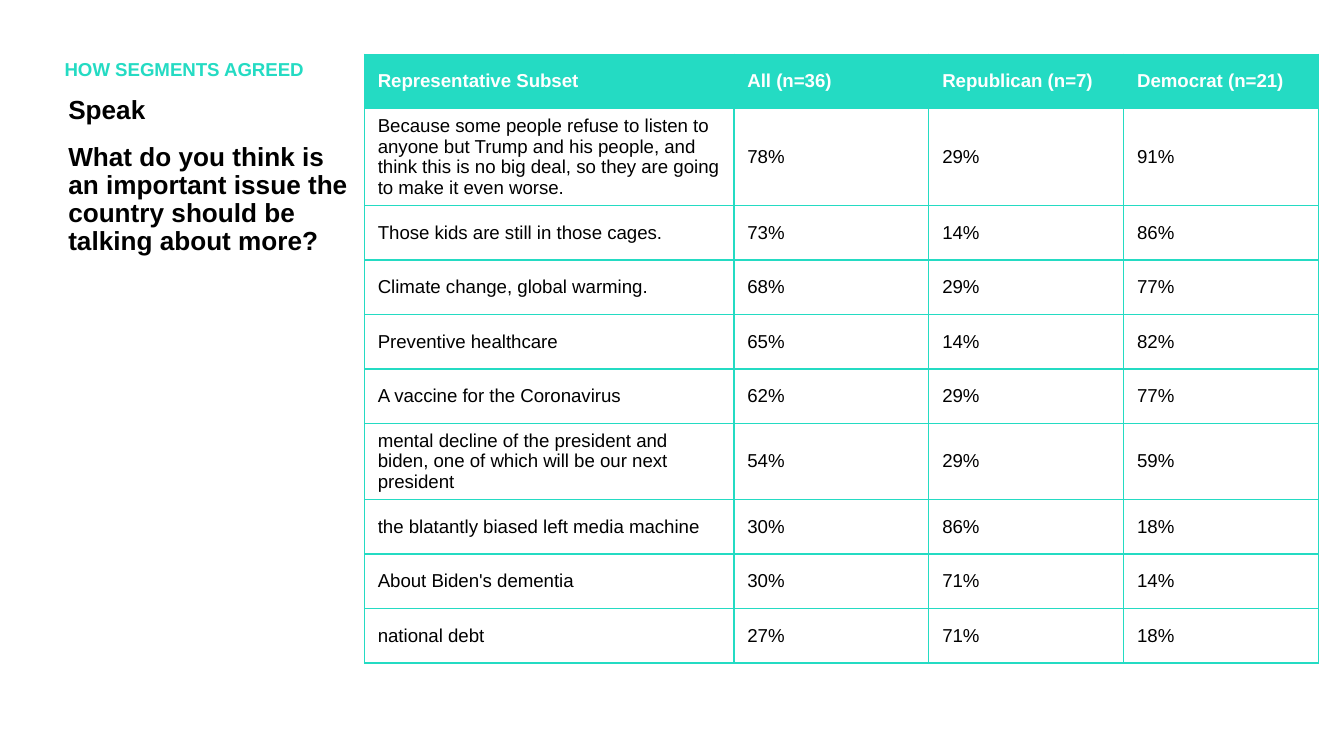
import dataclasses

import pptx
import pptx.dml.color
import pptx.enum.text
import pptx.oxml
import pptx.oxml.ns
import pptx.util

Pt = pptx.util.Pt
RGBColor = pptx.dml.color.RGBColor
ANCHOR = pptx.enum.text.MSO_ANCHOR

TEAL = RGBColor(0x24, 0xDB, 0xC3)
BLACK = RGBColor(0, 0, 0)
WHITE = RGBColor(0xFF, 0xFF, 0xFF)

BODY_FONT = {"name": "Arial", "size": Pt(10), "bold": False}
BOLD_FONT = BODY_FONT | {"bold": True}
QUESTION_FONT = BOLD_FONT | {"size": Pt(14)}
HEADING_SPACING = {"line_spacing": 0.9, "space_before": Pt(10),
                   "alignment": pptx.enum.text.PP_ALIGN.LEFT}
FRAME = {"word_wrap": True, "vertical_anchor": ANCHOR.TOP,
         "auto_size": pptx.enum.text.MSO_AUTO_SIZE.NONE}


@dataclasses.dataclass
class Answer:
    text: str
    everyone: int
    republican: int
    democrat: int

    def cells(self) -> list[str]:
        shares = (self.everyone, self.republican, self.democrat)
        return [self.text] + [f"{share}%" for share in shares]


HEADER = ["Representative Subset", "All (n=36)", "Republican (n=7)", "Democrat (n=21)"]
ANSWERS = [
    Answer("Because some people refuse to listen to anyone but Trump and his people, "
           "and think this is no big deal, so they are going to make it even worse.",
           78, 29, 91),
    Answer("Those kids are still in those cages.", 73, 14, 86),
    Answer("Climate change, global warming.", 68, 29, 77),
    Answer("Preventive healthcare", 65, 14, 82),
    Answer("A vaccine for the Coronavirus", 62, 29, 77),
    Answer("mental decline of the president and biden, one of which will be our "
           "next president", 54, 29, 59),
    Answer("the blatantly biased left media machine", 30, 86, 18),
    Answer("About Biden's dementia", 30, 71, 14),
    Answer("national debt", 27, 71, 18),
]
COLUMN_WIDTHS = [Pt(198)] + [Pt(104.4)] * 3
ROW_HEIGHT = Pt(29.2)


def set_all(target: object, values: dict) -> None:
    for key, value in values.items():
        setattr(target, key, value)


def add_run(p, text: str, font: dict, color: RGBColor) -> None:
    r = p.add_run()
    r.text = text
    set_all(r.font, font)
    r.font.color.rgb = color


def write_heading(sp, box: tuple, texts: list[str], font: dict, color: RGBColor) -> None:
    set_all(sp, dict(zip(("left", "top", "width", "height"), map(Pt, box))))
    tf = sp.text_frame
    set_all(tf, FRAME)
    for i, text in enumerate(texts):
        p = tf.add_paragraph() if i else tf.paragraphs[0]
        set_all(p, HEADING_SPACING)
        add_run(p, text, font, color)


def add_borders(cell, color: RGBColor, width: int) -> None:
    tc_pr = cell._tc.get_or_add_tcPr()
    for i, side in enumerate(("lnL", "lnR", "lnT", "lnB")):
        tc_pr.insert(i, pptx.oxml.parse_xml(
            f'<a:{side} {pptx.oxml.ns.nsdecls("a")} w="{width}"><a:solidFill>'
            f'<a:srgbClr val="{color}"/></a:solidFill></a:{side}>'))


def fill_cell(cell, text: str, is_header: bool) -> None:
    cell.vertical_anchor = ANCHOR.MIDDLE
    cell.fill.solid()
    cell.fill.fore_color.rgb = TEAL if is_header else WHITE
    add_run(cell.text_frame.paragraphs[0], text,
            BOLD_FONT if is_header else BODY_FONT, WHITE if is_header else BLACK)
    add_borders(cell, TEAL, Pt(0.75))


def add_answer_table(s) -> None:
    rows = [HEADER] + [answer.cells() for answer in ANSWERS]
    table = s.shapes.add_table(len(rows), len(HEADER), Pt(195.2), Pt(29),
                               sum(COLUMN_WIDTHS), ROW_HEIGHT * len(rows)).table
    for column, width in zip(table.columns, COLUMN_WIDTHS):
        column.width = width
    for i, texts in enumerate(rows):
        table.rows[i].height = ROW_HEIGHT
        for j, text in enumerate(texts):
            fill_cell(table.cell(i, j), text, is_header=i == 0)


def main() -> None:
    prs = pptx.Presentation()
    prs.slide_width, prs.slide_height = Pt(720), Pt(405)
    s = prs.slides.add_slide(prs.slide_layouts[5])

    # Section title and survey question
    write_heading(s.shapes.title, (27.4, 28.8, 167, 20),
                  ["HOW SEGMENTS AGREED"], BOLD_FONT, TEAL)
    question = s.shapes.add_textbox(0, 0, 0, 0)
    write_heading(question, (29.5, 48.2, 165.6, 317.5),
                  ["Speak", "What do you think is an important issue the country "
                   "should be talking about more?"], QUESTION_FONT, BLACK)

    # Agreement by segment
    add_answer_table(s)
    prs.save("out.pptx")


if __name__ == "__main__":
    main()
